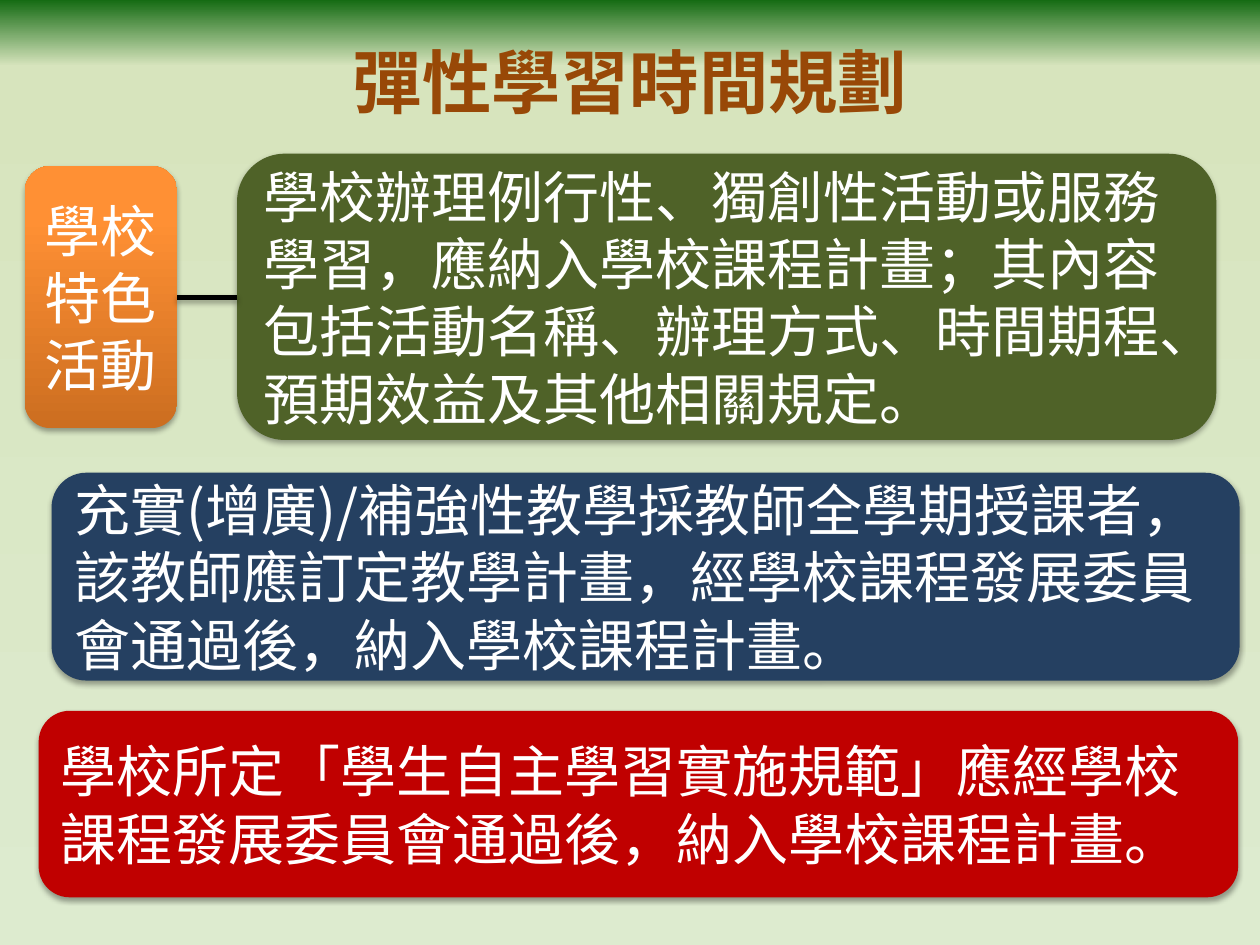
from dataclasses import dataclass

from lxml import etree
from pptx import Presentation
from pptx import util as u
from pptx.dml.color import RGBColor
from pptx.enum import shapes, text
from pptx.oxml import ns, parse_xml

FONT = "Noto Sans CJK SC"
COLORS = {
    "white": "FFFFFF", "black": "000000", "title": "984807",
    "green": "4F6228", "red": "C00000", "blue": "254061",
}
BACKGROUND_STOPS = ((0, "DDEBCF"), (93, "D7E4BD"), (100, "156B13"))
ORANGE_STOPS = ((0, "CC6E20"), (80, "FF9034"), (100, "FF9136"))


@dataclass(frozen=True)
class Panel:
    left: float
    top: float
    width: float
    height: float
    wording: str
    color: str = ""
    stops: tuple = ()
    align: text.PP_ALIGN = text.PP_ALIGN.LEFT
    side_inset: float = 0.25


ACTIVITY = Panel(0.5, 3.35, 3.07, 5.28, "學校特色活動", stops=ORANGE_STOPS,
                 align=text.PP_ALIGN.CENTER, side_inset=0.2)
ACTIVITY_PLAN = Panel(
    4.78, 3.1, 19.74, 5.77,
    "學校辦理例行性、獨創性活動或服務學習，應納入學校課程計畫；"
    "其內容包括活動名稱、辦理方式、時間期程、預期效益及其他相關規定。", "green")
SELF_LEARNING = Panel(
    0.78, 14.33, 24.18, 3.76,
    "學校所定「學生自主學習實施規範」應經學校課程發展委員會通過後，納入學校課程計畫。", "red")
TEACHING_PLAN = Panel(
    1.04, 9.53, 23.95, 4.19,
    "充實(增廣)/補強性教學採教師全學期授課者，該教師應訂定教學計畫，"
    "經學校課程發展委員會通過後，納入學校課程計畫。", "blue")


def set_gradient(fill, element, stops: tuple) -> None:
    """Give the fill inside element a bottom-to-top gradient of (percent, hex) stops."""
    fill.gradient()
    gradient = next(element.iter(ns.qn("a:gradFill")))
    for child in list(gradient):
        gradient.remove(child)
    stop_list = etree.SubElement(gradient, ns.qn("a:gsLst"))
    for percent, color in stops:
        stop = etree.SubElement(stop_list, ns.qn("a:gs"), pos=str(percent * 1000))
        etree.SubElement(stop, ns.qn("a:srgbClr"), val=color)
    etree.SubElement(gradient, ns.qn("a:lin"), ang="16200000", scaled="0")


def add_shadow(shape) -> None:
    shape.element.spPr.append(parse_xml(
        f'<a:effectLst {ns.nsdecls("a")}>'
        '<a:outerShdw blurRad="40000" dist="23000" dir="5400000" rotWithShape="0">'
        f'<a:srgbClr val="{COLORS["black"]}"><a:alpha val="35000"/></a:srgbClr>'
        '</a:outerShdw></a:effectLst>'))


def write_text(shape, wording: str, size: float, color: str,
               align: text.PP_ALIGN, bold: bool = False) -> None:
    frame = shape.text_frame
    frame.word_wrap = True
    frame.vertical_anchor = text.MSO_ANCHOR.MIDDLE
    paragraph = frame.paragraphs[0]
    paragraph.alignment = align
    run = paragraph.add_run()
    run.text = wording
    run.font.size = u.Pt(size)
    run.font.bold = bold
    run.font.name = FONT
    run.font.color.rgb = RGBColor.from_string(COLORS[color])
    etree.SubElement(run.font._element, ns.qn("a:ea"), typeface=FONT)


def add_panel(slide, panel: Panel) -> None:
    shape = slide.shapes.add_shape(
        shapes.MSO_SHAPE.ROUNDED_RECTANGLE,
        u.Cm(panel.left), u.Cm(panel.top), u.Cm(panel.width), u.Cm(panel.height))
    if panel.stops:
        set_gradient(shape.fill, shape.element, panel.stops)
    else:
        shape.fill.solid()
        shape.fill.fore_color.rgb = RGBColor.from_string(COLORS[panel.color])
    shape.line.fill.background()
    add_shadow(shape)
    frame = shape.text_frame
    frame.margin_left = frame.margin_right = u.Cm(panel.side_inset)
    write_text(shape, panel.wording, 32, "white", panel.align)


def add_link(slide, start: Panel, end: Panel) -> None:
    """Join the right side of start to the left side of end."""
    middle = u.Cm(start.top + start.height / 2)
    connector = slide.shapes.add_connector(
        shapes.MSO_CONNECTOR.STRAIGHT,
        u.Cm(start.left + start.width), middle, u.Cm(end.left), middle)
    connector.line.width = u.Pt(3)
    connector.line.color.rgb = RGBColor.from_string(COLORS["black"])
    add_shadow(connector)


def main() -> None:
    presentation = Presentation()
    presentation.slide_width, presentation.slide_height = u.Cm(25.4), u.Cm(19.05)
    slide = presentation.slides.add_slide(presentation.slide_layouts[6])
    set_gradient(slide.background.fill, slide.element, BACKGROUND_STOPS)

    add_panel(slide, ACTIVITY)
    add_panel(slide, ACTIVITY_PLAN)
    add_link(slide, ACTIVITY, ACTIVITY_PLAN)
    add_panel(slide, SELF_LEARNING)
    add_panel(slide, TEACHING_PLAN)

    title = slide.shapes.add_textbox(u.Cm(1.27), u.Cm(0.76), u.Cm(22.86), u.Cm(1.75))
    write_text(title, "彈性學習時間規劃", 39.6, "title", text.PP_ALIGN.CENTER, bold=True)
    presentation.save("out.pptx")


if __name__ == "__main__":
    main()
